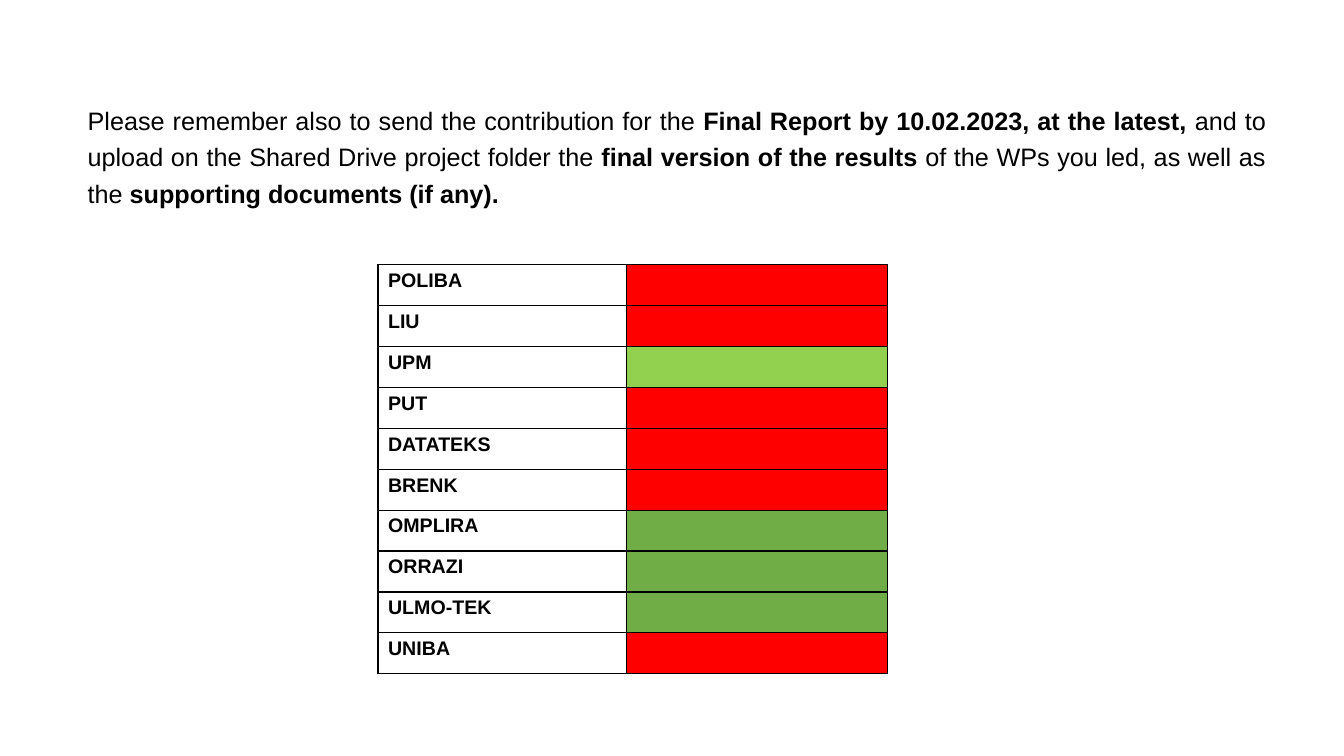
"""Build the slide with the final report reminder and the partner status table."""
from dataclasses import dataclass

from lxml import etree
from pptx import Presentation
from pptx import util as u
from pptx.dml import color
from pptx.enum import text
from pptx.oxml import ns

PX = 9525
FONT = "Arial"
COLORS = {
    "black": "000000",
    "white": "FFFFFF",
    "missing": "FF0000",
    "partial": "92D050",
    "done": "70AD47",
}


@dataclass(frozen=True)
class Phrase:
    words: str
    bold: bool = False


@dataclass(frozen=True)
class Partner:
    name: str
    status: str


REMINDER = [
    Phrase("Please remember also to send the contribution for the "),
    Phrase("Final Report by 10.02.2023, at the latest, ", True),
    Phrase("and to upload on the Shared Drive project folder the"),
    Phrase(" final version of the results ", True),
    Phrase("of the WPs you led, as well as the "),
    Phrase("supporting documents (if any).", True),
]
PARTNERS = [
    Partner("POLIBA", "missing"),
    Partner("LIU", "missing"),
    Partner("UPM", "partial"),
    Partner("PUT", "missing"),
    Partner("DATATEKS", "missing"),
    Partner("BRENK", "missing"),
    Partner("OMPLIRA", "done"),
    Partner("ORRAZI", "done"),
    Partner("ULMO-TEK", "done"),
    Partner("UNIBA", "missing"),
]
COLUMN_WIDTHS = (237, 248)
ROW_HEIGHT = 39


def px(length: int) -> u.Emu:
    return u.Emu(length * PX)


def rgb(name: str) -> color.RGBColor:
    return color.RGBColor.from_string(COLORS[name])


def style_span(span, size: int, bold: bool) -> None:
    span.font.name = FONT
    span.font.size = u.Pt(size)
    span.font.bold = bold
    span.font.color.rgb = rgb("black")


def add_reminder(page, phrases: list[Phrase]) -> None:
    box = page.shapes.add_textbox(px(74), px(90), px(1141), px(150))
    frame = box.text_frame
    frame.word_wrap = True
    frame.auto_size = text.MSO_AUTO_SIZE.SHAPE_TO_FIT_TEXT
    para = frame.paragraphs[0]
    para.alignment = text.PP_ALIGN.JUSTIFY
    para.line_spacing = 1.2
    for phrase in phrases:
        span = para.add_run()
        span.text = phrase.words
        style_span(span, 18, phrase.bold)


def style_cell(cell, fill: str) -> None:
    cell.fill.solid()
    cell.fill.fore_color.rgb = rgb(fill)
    properties = cell._tc.get_or_add_tcPr()
    for position, side in enumerate(("lnL", "lnR", "lnT", "lnB")):
        line = etree.Element(ns.qn(f"a:{side}"), w=str(u.Pt(1)))
        solid = etree.SubElement(line, ns.qn("a:solidFill"))
        etree.SubElement(solid, ns.qn("a:srgbClr"), val=COLORS["black"])
        properties.insert(position, line)


def add_status_table(page, partners: list[Partner]) -> None:
    table = page.shapes.add_table(
        len(partners), len(COLUMN_WIDTHS), px(360), px(252),
        px(sum(COLUMN_WIDTHS)), px(ROW_HEIGHT * len(partners)),
    ).table
    table.first_row = False
    table.horz_banding = False
    for column, width in zip(table.columns, COLUMN_WIDTHS):
        column.width = px(width)
    for row, partner in zip(table.rows, partners):
        row.height = px(ROW_HEIGHT)
        name_cell, status_cell = row.cells
        name_cell.text_frame.text = partner.name
        style_span(name_cell.text_frame.paragraphs[0].runs[0], 14, True)
        style_cell(name_cell, "white")
        style_cell(status_cell, partner.status)


def main() -> None:
    deck = Presentation()
    deck.slide_width, deck.slide_height = px(1280), px(720)
    page = deck.slides.add_slide(deck.slide_layouts[6])
    add_reminder(page, REMINDER)
    add_status_table(page, PARTNERS)
    deck.save("out.pptx")


if __name__ == "__main__":
    main()
